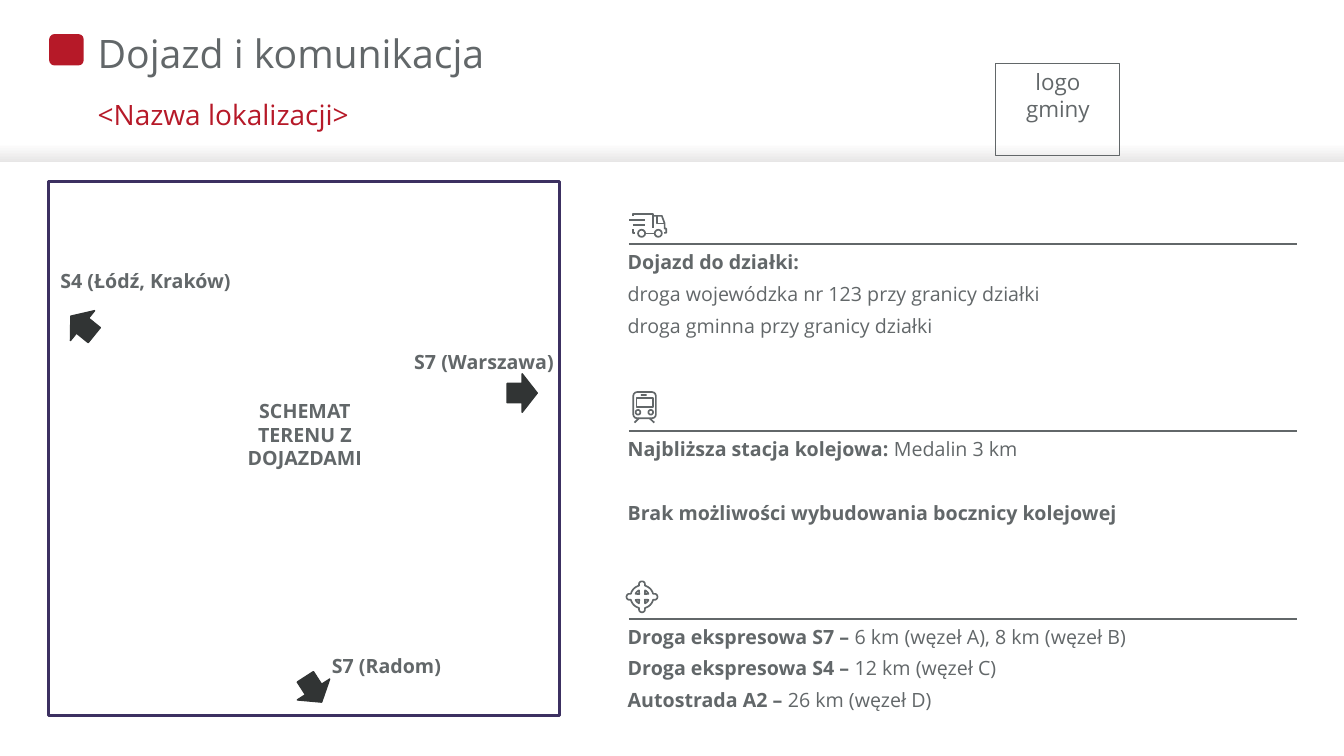
from math import cos, pi, sin, sqrt

from lxml.etree import SubElement
from pptx import Presentation
from pptx.dml.color import RGBColor
from pptx.enum.shapes import MSO_CONNECTOR as Connector, MSO_SHAPE as Shape
from pptx.enum.text import MSO_ANCHOR as Anchor, MSO_AUTO_SIZE as AutoSize, PP_ALIGN as Align
from pptx.oxml.ns import qn
from pptx.util import Cm, Pt

COLORS = {
    "text": "626769",
    "accent": "B61928",
    "frame": "3C3061",
    "arrow": "313434",
    "band": "E7E6E6",
    "white": "FFFFFF",
}
FONT = "Open Sans"
ICON_LINE = 1.2


def rgb(name):
    return RGBColor.from_string(COLORS[name])


class SlideBuilder:
    def __init__(self, slide):
        self.slide = slide
        self.shapes = slide.shapes

    def style(self, shape, fill=None, line=None, weight=1):
        shape.shadow.inherit = False
        if fill:
            shape.fill.solid()
            shape.fill.fore_color.rgb = rgb(fill)
        else:
            shape.fill.background()
        if line:
            shape.line.color.rgb = rgb(line)
            shape.line.width = Pt(weight)
        else:
            shape.line.fill.background()
        return shape

    def box(self, kind, left, top, width, height, **look):
        shape = self.shapes.add_shape(kind, Cm(left), Cm(top), Cm(width), Cm(height))
        return self.style(shape, **look)

    def band(self, left, top, width, height):
        shape = self.box(Shape.RECTANGLE, left, top, width, height)
        shape.fill.gradient()
        shape.fill.gradient_angle = 270
        for stop, position, color in zip(shape.fill.gradient_stops, (0, 1), ("white", "band")):
            stop.position = position
            stop.color.rgb = rgb(color)

    def line(self, start, end, weight):
        connector = self.shapes.add_connector(
            Connector.STRAIGHT, *(Cm(value) for value in (*start, *end)))
        connector.line.color.rgb = rgb("text")
        connector.line.width = Pt(weight)
        SubElement(connector._element.spPr, qn("a:effectLst"))

    def outline(self, points, close=False):
        corners = [(Cm(x), Cm(y)) for x, y in points]
        builder = self.shapes.build_freeform(*corners[0])
        builder.add_line_segments(corners[1:], close=close)
        self.style(builder.convert_to_shape(), line="text", weight=ICON_LINE)

    def runs(self, paragraph, parts, size, color="text"):
        for text, bold in parts:
            run = paragraph.add_run()
            run.text = text
            run.font.name = FONT
            run.font.size = Pt(size)
            run.font.bold = bold
            run.font.color.rgb = rgb(color)

    def text(self, left, top, width, height, paragraphs, align=Align.LEFT, gap=0, after=0):
        shape = self.shapes.add_textbox(Cm(left), Cm(top), Cm(width), Cm(height))
        frame = shape.text_frame
        frame.word_wrap = True
        for index, parts in enumerate(paragraphs):
            paragraph = frame.paragraphs[0] if index == 0 else frame.add_paragraph()
            paragraph.alignment = align
            paragraph.space_after = Pt(after)
            paragraph.space_before = Pt(gap if index else 0)
            self.runs(paragraph, parts, 14)

    def placeholder(self, shape, top, height, text, size, color):
        shape.left, shape.top, shape.width, shape.height = Cm(2.46), Cm(top), Cm(21.89), Cm(height)
        frame = shape.text_frame
        frame.auto_size = AutoSize.NONE
        frame.word_wrap = True
        frame.vertical_anchor = Anchor.MIDDLE
        frame.margin_left = frame.margin_right = frame.margin_top = frame.margin_bottom = 0
        paragraph = frame.paragraphs[0]
        properties = paragraph._p.get_or_add_pPr()
        properties.set("marL", "0")
        properties.set("indent", "0")
        SubElement(properties, qn("a:buNone"))
        paragraph.alignment = Align.LEFT
        paragraph.line_spacing = 0.9
        paragraph.space_before = Pt(0)
        self.runs(paragraph, [(text, False)], size, color)

    def icon(self, left, top, paths=(), closed=(), circles=()):
        """Line icon; its coordinates are centimetres from the start of the rule."""
        for path in (*paths, *closed):
            points = [(left + x, top + y) for x, y in path]
            if len(points) == 2:
                self.line(*points, ICON_LINE)
            else:
                self.outline(points, close=path in closed)
        for x, y, radius in circles:
            self.box(Shape.OVAL, left + x - radius, top + y - radius, 2 * radius, 2 * radius,
                     line="text", weight=ICON_LINE)


def truck_icon(builder, left, top):
    body = [(0.1, -0.7), (0.1, -0.76), (0.61, -0.76), (0.61, -0.41)]
    cab = [(0.61, -0.71), (0.83, -0.71), (0.9, -0.52), (0.9, -0.39),
           (0.94, -0.39), (0.94, -0.28), (0.89, -0.28)]
    window = [(0.71, -0.71), (0.71, -0.52), (0.9, -0.52)]
    bumper = [(0.1, -0.37), (0.1, -0.27), (0.15, -0.27)]
    axle = [(0.41, -0.27), (0.65, -0.27)]
    speed = [[(0.01, -0.6), (0.41, -0.6)], [(0.1, -0.48), (0.41, -0.48)]]
    builder.icon(left, top, paths=[body, cab, window, bumper, axle, *speed],
                 circles=[(0.32, -0.27, 0.09), (0.74, -0.27, 0.09)])


def train_icon(builder, left, top):
    look = {"line": "text", "weight": ICON_LINE}
    builder.box(Shape.ROUNDED_RECTANGLE, left + 0.11, top - 0.99, 0.57, 0.66, **look)
    builder.box(Shape.RECTANGLE, left + 0.19, top - 0.84, 0.41, 0.22, **look)
    builder.box(Shape.RECTANGLE, left + 0.3, top - 0.94, 0.15, 0.05, fill="text")
    builder.icon(left, top,
                 paths=[[(0.25, -0.33), (0.14, -0.22)], [(0.52, -0.33), (0.64, -0.22)]],
                 circles=[(0.23, -0.48, 0.06), (0.55, -0.48, 0.06)])


def junction_icon(builder, left, top):
    ring, lug_distance, lug_radius = 0.29, 0.31, 0.08

    def radius(angle):
        offset = (angle + pi / 4) % (pi / 2) - pi / 4
        inside = lug_radius ** 2 - (lug_distance * sin(offset)) ** 2
        return max(ring, lug_distance * cos(offset) + sqrt(inside)) if inside > 0 else ring

    angles = [step * pi / 60 for step in range(120)]
    rim = [(radius(angle) * cos(angle), radius(angle) * sin(angle)) for angle in angles]
    arc = [(0.18 * cos(step * pi / 36), 0.18 * sin(step * pi / 36)) for step in range(5, 14)]
    quarters = [[(x * side, y * level) for x, y in [(0.07, 0.07), *arc]]
                for side in (-1, 1) for level in (-1, 1)]
    builder.icon(left + 0.33, top - 0.55, closed=[rim, *quarters])


def main():
    presentation = Presentation()
    presentation.slide_width, presentation.slide_height = Cm(33.87), Cm(19.05)
    slide = presentation.slides.add_slide(presentation.slide_layouts[1])
    builder = SlideBuilder(slide)

    # Header
    builder.band(0, 3.61, 33.87, 0.48)
    builder.box(Shape.ROUNDED_RECTANGLE, 1.24, 0.86, 0.87, 0.79, fill="accent")
    badge = builder.box(Shape.RECTANGLE, 25.1, 1.6, 3.12, 2.31, line="text", weight=0.75)
    badge.text_frame.word_wrap = True
    badge.text_frame.vertical_anchor = Anchor.TOP
    badge.text_frame.paragraphs[0].alignment = Align.CENTER
    builder.runs(badge.text_frame.paragraphs[0], [("logo gminy", False)], 16)
    builder.placeholder(slide.shapes.title, 0.74, 1.32, "Dojazd i komunikacja", 28, "text")
    builder.placeholder(slide.placeholders[1], 2.18, 1.5, "<Nazwa lokalizacji>", 20, "accent")

    # Access sections: icon, space between paragraphs, paragraphs
    sections = [
        (truck_icon, 0, [[("Dojazd do działki:", True)],
                         [("droga wojewódzka nr 123 przy granicy działki", False)],
                         [("droga gminna przy granicy działki", False)]]),
        (train_icon, 22.8, [[("Najbliższa stacja kolejowa: ", True), ("Medalin 3 km", False)],
                            [("Brak możliwości wybudowania bocznicy kolejowej", True)]]),
        (junction_icon, 0, [
            [("Droga ekspresowa S7 – ", True), ("6 km (węzeł A), 8 km (węzeł B)", False)],
            [("Droga ekspresowa S4 – ", True), ("12 km (węzeł C)", False)],
            [("Autostrada A2 – ", True), ("26 km (węzeł D)", False)]]),
    ]
    for index, (draw_icon, gap, paragraphs) in enumerate(sections):
        rule = 6.15 + 4.72 * index
        draw_icon(builder, 15.85, rule)
        builder.line((15.85, rule), (32.69, rule), 1.5)
        builder.text(15.57, rule + 0.02, 17.63, 2.51, paragraphs, gap=gap, after=6)

    # Site map with its exits: label place, arrow place and rotation
    builder.box(Shape.RECTANGLE, 1.22, 4.57, 12.88, 13.46, line="frame", weight=2.25)
    builder.text(5.31, 9.93, 4.75, 1.45, [[("SCHEMAT TERENU Z DOJAZDAMI", True)]], Align.CENTER)
    exits = [
        ("S7 (Radom)", 7.29, 16.36, 7.52, 16.89, 57.2),
        ("S7 (Warszawa)", 9.75, 8.69, 12.78, 9.42, 0),
        ("S4 (Łódź, Kraków)", 1.22, 6.65, 1.7, 7.72, 219),
    ]
    for name, left, top, arrow_left, arrow_top, rotation in exits:
        arrow = builder.box(Shape.RIGHT_ARROW, arrow_left, arrow_top, 0.76, 0.97,
                            fill="arrow", line="arrow")
        arrow.rotation = rotation
        builder.text(left, top, 4.9, 0.86, [[(name, True)]], Align.CENTER)

    presentation.save("out.pptx")


if __name__ == "__main__":
    main()
